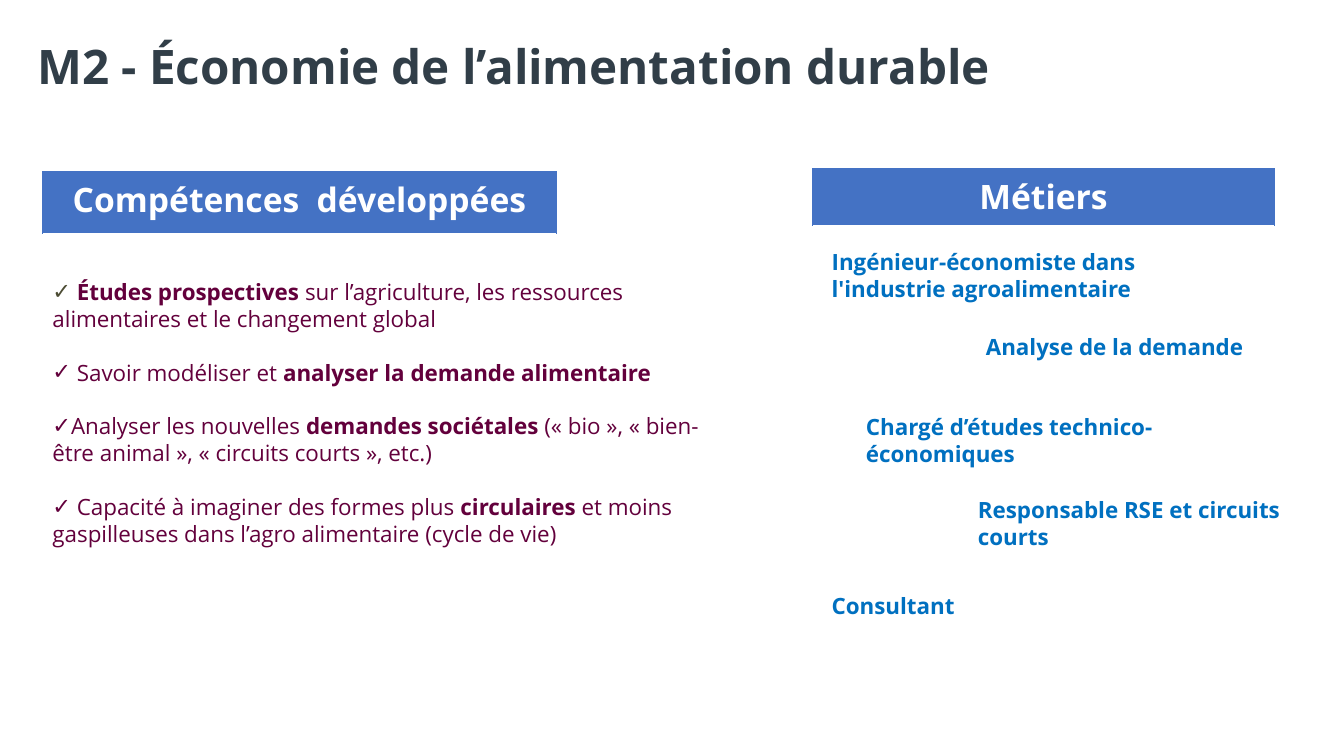
from lxml import etree
from pptx import Presentation
from pptx.dml.color import RGBColor
from pptx.enum.text import MSO_ANCHOR, MSO_AUTO_SIZE, PP_ALIGN
from pptx.oxml.ns import qn
from pptx.util import Inches, Pt

LEFT = PP_ALIGN.LEFT
CENTER = PP_ALIGN.CENTER
TOP = MSO_ANCHOR.TOP
MIDDLE = MSO_ANCHOR.MIDDLE
NO_AUTOFIT = MSO_AUTO_SIZE.NONE

FONT = "Open Sans"
SLATE = RGBColor(0x31, 0x3E, 0x48)
BLUE = RGBColor(0x44, 0x72, 0xC4)
JOB_BLUE = RGBColor(0x00, 0x70, 0xC0)
PLUM = RGBColor(0x63, 0x00, 0x3C)
OLIVE = RGBColor(0x4C, 0x4C, 0x33)
WHITE = RGBColor(0xFF, 0xFF, 0xFF)

SKILLS = [
    (OLIVE, [(" ", False), ("Études prospectives ", True),
             ("sur l’agriculture, les ressources alimentaires et le changement global", False)]),
    (PLUM, [(" Savoir modéliser et ", False), ("analyser la demande alimentaire", True)]),
    (PLUM, [("Analyser les nouvelles ", False), ("demandes sociétales", True),
            (" (« bio », « bien-être animal », « circuits courts », etc.)", False)]),
    (PLUM, [(" Capacité à imaginer des formes plus ", False), ("circulaires", True),
            (" et moins gaspilleuses dans l’agro alimentaire (cycle de vie)", False)]),
]

JOBS = [
    ("Ingénieur-économiste dans l'industrie agroalimentaire", 8.15, 2.41, 3.79, 0.64),
    ("Analyse de la demande", 9.68, 3.26, 2.79, 0.37),
    ("Chargé d’études technico-économiques", 8.49, 4.05, 3.83, 0.64),
    ("Responsable RSE et circuits courts", 9.6, 4.87, 3.32, 0.64),
    ("Consultant", 8.15, 5.83, 2.04, 0.37),
]


def format_run(run, size, color, bold=True):
    """Set the font of a run."""
    run.font.name = FONT
    run.font.size = Pt(size)
    run.font.bold = bold
    run.font.color.rgb = color


def place(shape, left, top, width, height):
    """Move and size a placeholder."""
    shape.left, shape.top = Inches(left), Inches(top)
    shape.width, shape.height = Inches(width), Inches(height)


def fill_title(title, text):
    """Write the slide title."""
    place(title, 0.27, 0.07, 10.77, 1.24)
    text_frame = title.text_frame
    text_frame.text = text
    text_frame.auto_size = NO_AUTOFIT
    text_frame.vertical_anchor = MIDDLE
    paragraph = text_frame.paragraphs[0]
    paragraph.alignment = LEFT
    paragraph.line_spacing = 0.9
    format_run(paragraph.runs[0], 34, SLATE)


def add_check_bullet(paragraph, color):
    """Give a paragraph a check mark that runs in with its text."""
    properties = paragraph._p.get_or_add_pPr()
    properties.set("marL", "0")
    properties.set("indent", "0")
    bullet_color = etree.SubElement(properties, qn("a:buClr"))
    etree.SubElement(bullet_color, qn("a:srgbClr"), val=str(color))
    etree.SubElement(properties, qn("a:buChar"), char="✓")


def fill_skills(body):
    """Write the list of skills."""
    place(body, 0.42, 2.71, 6.67, 3.06)
    text_frame = body.text_frame
    text_frame.auto_size = NO_AUTOFIT
    text_frame.vertical_anchor = TOP
    for index, (bullet_color, pieces) in enumerate(SKILLS):
        paragraph = text_frame.add_paragraph() if index else text_frame.paragraphs[0]
        add_check_bullet(paragraph, bullet_color)
        paragraph.alignment = LEFT
        paragraph.line_spacing = 1.0
        paragraph.space_before = Pt(19.2 if index else 0)
        for text, bold in pieces:
            run = paragraph.add_run()
            run.text = text
            format_run(run, 16, PLUM, bold)


def add_job(slide, text, left, top, width, height):
    """Add the name of one job."""
    box = slide.shapes.add_textbox(Inches(left), Inches(top), Inches(width), Inches(height))
    text_frame = box.text_frame
    text_frame.word_wrap = True
    text_frame.text = text
    format_run(text_frame.paragraphs[0].runs[0], 16, JOB_BLUE)


def add_border(cell, side, color, width):
    """Draw one side of a cell border."""
    line = etree.Element(qn(f"a:{side}"), w=str(Pt(width)))
    fill = etree.SubElement(line, qn("a:solidFill"))
    etree.SubElement(fill, qn("a:srgbClr"), val=str(color))
    return line


def add_heading(slide, text, left, top, width, height):
    """Add a one-cell table as a column heading."""
    frame = slide.shapes.add_table(1, 1, Inches(left), Inches(top), Inches(width), Inches(height))
    frame.table.first_row = False
    frame.table.horz_banding = False
    cell = frame.table.cell(0, 0)
    cell.text = text
    cell.fill.solid()
    cell.fill.fore_color.rgb = BLUE
    paragraph = cell.text_frame.paragraphs[0]
    paragraph.alignment = CENTER
    format_run(paragraph.runs[0], 24, WHITE)
    borders = [("lnL", BLUE, 0.5), ("lnR", BLUE, 0.5), ("lnT", BLUE, 0.5), ("lnB", WHITE, 1)]
    properties = cell._tc.get_or_add_tcPr()
    for position, (side, color, line_width) in enumerate(borders):
        properties.insert(position, add_border(cell, side, color, line_width))


def main():
    """Build the slide and save it."""
    presentation = Presentation()
    presentation.slide_width = Inches(13.33)
    presentation.slide_height = Inches(7.5)
    slide = presentation.slides.add_slide(presentation.slide_layouts[1])
    fill_title(slide.shapes.title, "M2 - Économie de l’alimentation durable")
    fill_skills(slide.placeholders[1])
    for job in JOBS:
        add_job(slide, *job)
    add_heading(slide, "Compétences  développées", 0.42, 1.7, 5.1, 0.62)
    add_heading(slide, "Métiers", 8.06, 1.67, 4.58, 0.57)
    presentation.save("out.pptx")


if __name__ == "__main__":
    main()
